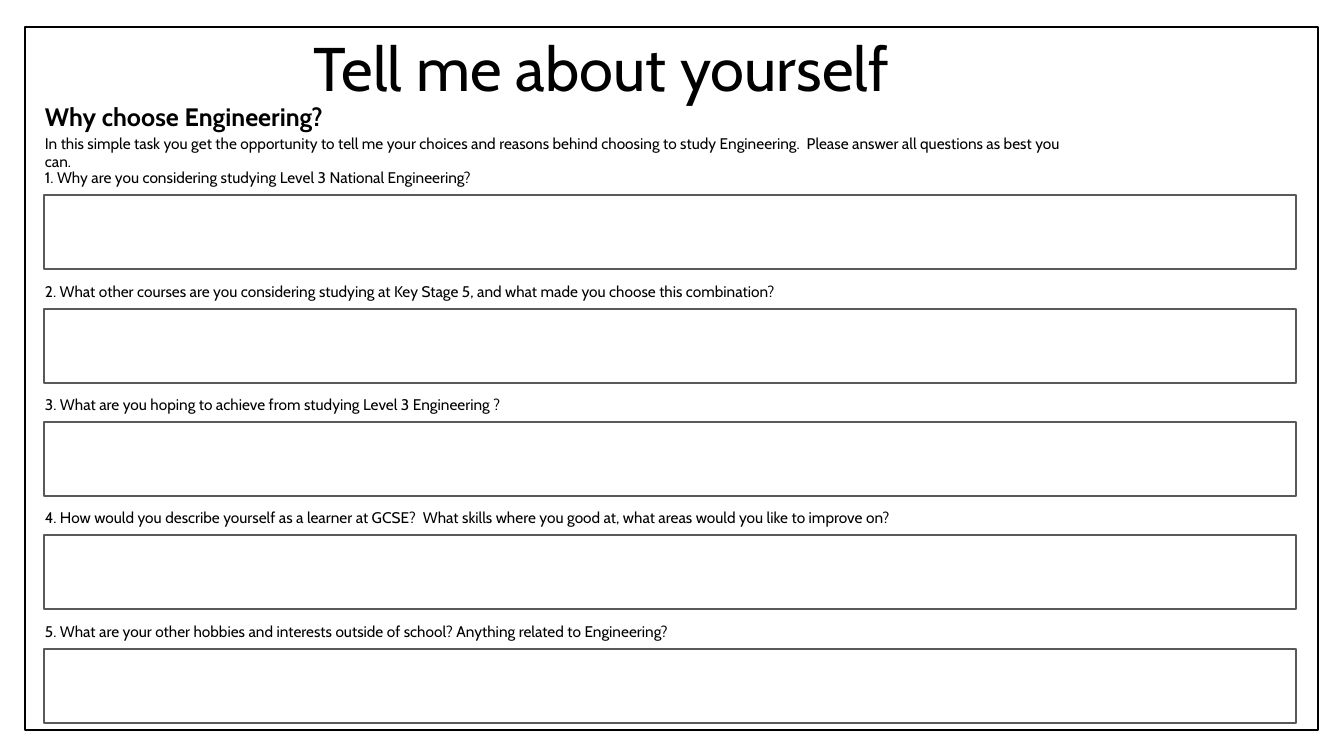
from dataclasses import dataclass

from pptx import Presentation
from pptx.dml.color import RGBColor
from pptx.enum.shapes import MSO_SHAPE
from pptx.enum.text import MSO_ANCHOR, MSO_AUTO_SIZE, PP_ALIGN
from pptx.shapes.autoshape import Shape
from pptx.shapes.shapetree import GroupShapes, SlideShapes
from pptx.util import Emu, Pt

RECTANGLE = MSO_SHAPE.RECTANGLE
TOP, MIDDLE = MSO_ANCHOR.TOP, MSO_ANCHOR.MIDDLE
LEFT, CENTER = PP_ALIGN.LEFT, PP_ALIGN.CENTER
NO_AUTOFIT = MSO_AUTO_SIZE.NONE
EMU_PER_PX = 914400 / 100.8


@dataclass(frozen=True)
class Theme:
    font: str = "Cabin"
    text: RGBColor = RGBColor(0, 0, 0)
    paper: RGBColor = RGBColor(255, 255, 255)
    frame: RGBColor = RGBColor(0, 0, 0)
    answer: RGBColor = RGBColor(0x59, 0x59, 0x59)
    title_size: int = 44
    heading_size: int = 18
    body_size: int = 11
    frame_width: float = 1
    answer_width: float = 1.5


@dataclass(frozen=True)
class Box:
    left: int
    top: int
    width: int
    height: int


@dataclass(frozen=True)
class TextStyle:
    size: int
    bold: bool = False
    anchor: MSO_ANCHOR = TOP
    alignment: PP_ALIGN = LEFT
    line_spacing: float = 1.0


@dataclass(frozen=True)
class Question:
    text: str
    width: int


THEME = Theme()
TITLE_STYLE = TextStyle(THEME.title_size, anchor=MIDDLE, alignment=CENTER, line_spacing=0.9)
HEADING_STYLE = TextStyle(THEME.heading_size, bold=True, anchor=MIDDLE, line_spacing=0.9)
BODY_STYLE = TextStyle(THEME.body_size)

FRAME = Box(25, 27, 1293, 703)
TITLE = Box(82, 35, 1039, 74)
HEADING = Box(35, 98, 420, 40)
INTRODUCTION = Box(35, 129, 1046, 29)

FIRST_QUESTION_TOP, LAST_QUESTION_TOP = 163, 617
QUESTION_LEFT, QUESTION_HEIGHT = 35, 29
ANSWER_LEFT, ANSWER_OFFSET, ANSWER_WIDTH, ANSWER_HEIGHT = 44, 32, 1252, 74

QUESTIONS = [
    Question("1. Why are you considering studying Level 3 National Engineering?", 672),
    Question("2. What other courses are you considering studying at Key Stage 5, "
             "and what made you choose this combination?", 777),
    Question("3. What are you hoping to achieve from studying Level 3 Engineering ?", 672),
    Question("4. How would you describe yourself as a learner at GCSE?  "
             "What skills where you good at, what areas would you like to improve on?", 1062),
    Question("5. What are your other hobbies and interests outside of school? "
             "Anything related to Engineering?", 1062),
]


def px(length: int) -> Emu:
    return Emu(round(length * EMU_PER_PX))


def place(shape: Shape, box: Box) -> None:
    shape.left, shape.top = px(box.left), px(box.top)
    shape.width, shape.height = px(box.width), px(box.height)


def write(shape: Shape, text: str, style: TextStyle) -> None:
    frame = shape.text_frame
    frame.word_wrap = True
    frame.auto_size = NO_AUTOFIT
    frame.vertical_anchor = style.anchor
    paragraph = frame.paragraphs[0]
    paragraph.alignment = style.alignment
    paragraph.line_spacing = style.line_spacing
    run = paragraph.add_run()
    run.text = text
    run.font.name = THEME.font
    run.font.size = Pt(style.size)
    run.font.bold = style.bold
    run.font.color.rgb = THEME.text


def add_text(shapes: SlideShapes | GroupShapes, box: Box, text: str, style: TextStyle) -> None:
    shape = shapes.add_textbox(0, 0, 0, 0)
    place(shape, box)
    write(shape, text, style)


def add_outline(shapes: SlideShapes | GroupShapes, box: Box, color: RGBColor,
                line_width: float) -> Shape:
    shape = shapes.add_shape(RECTANGLE, px(box.left), px(box.top), px(box.width), px(box.height))
    shape.shadow.inherit = False
    shape.fill.background()
    shape.line.color.rgb = color
    shape.line.width = Pt(line_width)
    return shape


def add_question(shapes: SlideShapes, question: Question, top: int) -> None:
    """Group a question with the empty answer box below it."""
    group = shapes.add_group_shape()
    answer = Box(ANSWER_LEFT, top + ANSWER_OFFSET, ANSWER_WIDTH, ANSWER_HEIGHT)
    add_outline(group.shapes, answer, THEME.answer, THEME.answer_width)
    label = Box(QUESTION_LEFT, top, question.width, QUESTION_HEIGHT)
    add_text(group.shapes, label, question.text, BODY_STYLE)


def main() -> None:
    presentation = Presentation()
    presentation.slide_width, presentation.slide_height = px(1344), px(756)
    slide = presentation.slides.add_slide(presentation.slide_layouts.get_by_name("Title Only"))
    shapes = slide.shapes

    page_frame = add_outline(shapes, FRAME, THEME.frame, THEME.frame_width)
    page_frame.fill.solid()
    page_frame.fill.fore_color.rgb = THEME.paper

    add_text(shapes, HEADING, "Why choose Engineering?", HEADING_STYLE)
    add_text(shapes, INTRODUCTION,
             "In this simple task you get the opportunity to tell me your choices and reasons "
             "behind choosing to study Engineering.  Please answer all questions as best you can.",
             BODY_STYLE)

    span = LAST_QUESTION_TOP - FIRST_QUESTION_TOP
    for index, question in enumerate(QUESTIONS):
        top = FIRST_QUESTION_TOP + round(index * span / (len(QUESTIONS) - 1))
        add_question(shapes, question, top)

    title = shapes.title
    place(title, TITLE)
    write(title, "Tell me about yourself", TITLE_STYLE)
    # The title lies in front of the filled page frame.
    title.element.getparent().append(title.element)

    presentation.save("out.pptx")


if __name__ == "__main__":
    main()
